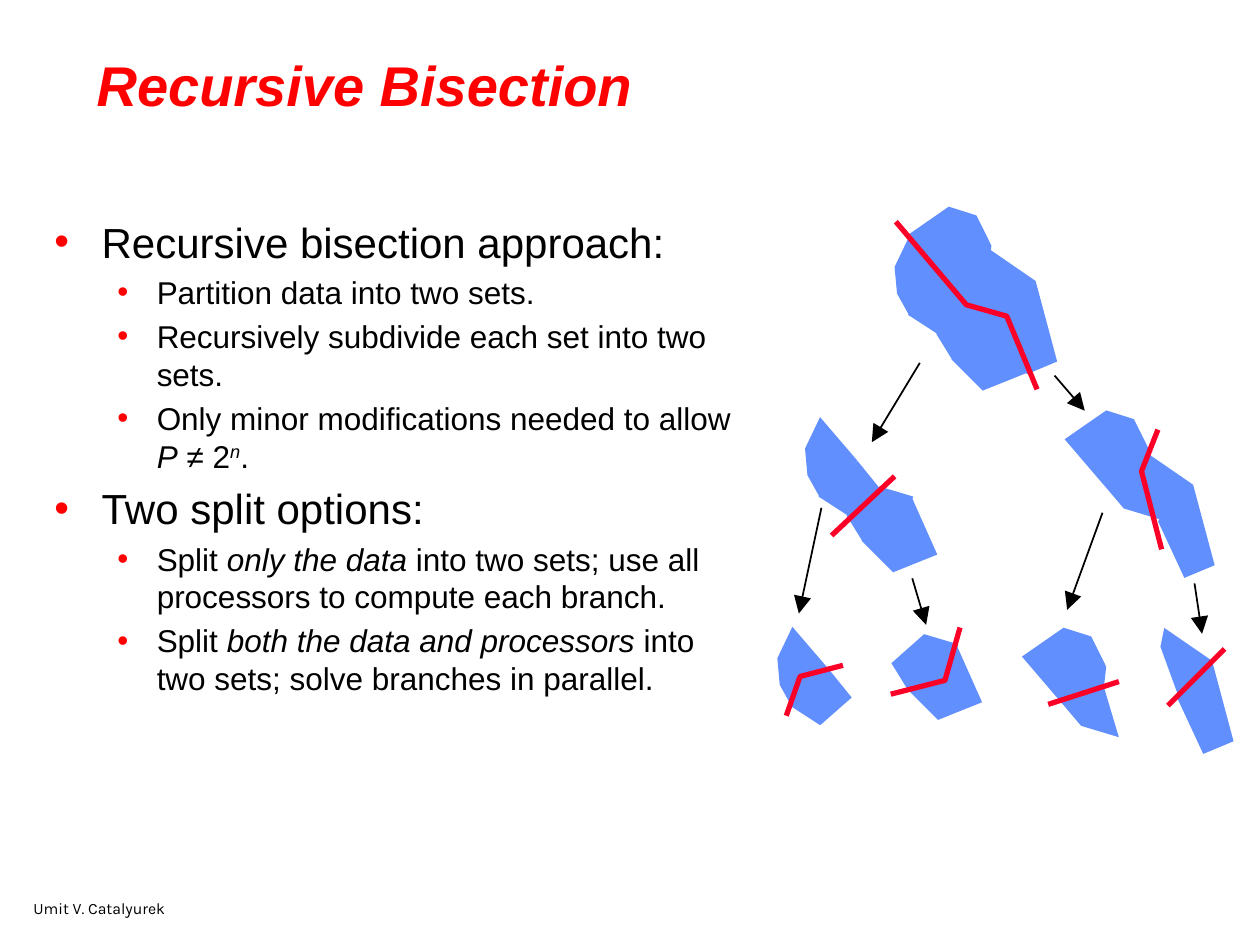
"""Build the recursive bisection slide."""
from dataclasses import dataclass

from lxml import etree
from pptx import Presentation
from pptx.dml.color import RGBColor
from pptx.enum.shapes import MSO_CONNECTOR
from pptx.enum.text import MSO_ANCHOR, PP_ALIGN
from pptx.oxml.ns import qn
from pptx.util import Pt

STRAIGHT = MSO_CONNECTOR.STRAIGHT
MIDDLE, TOP = MSO_ANCHOR.MIDDLE, MSO_ANCHOR.TOP
LEFT = PP_ALIGN.LEFT
BLUE, CRIMSON, RED, BLACK = "618FFD", "FC0128", "FF0000", "000000"
Point = tuple[float, float]

CELLS: dict[str, list[Point]] = {
    "A": [(519, 180), (535.7, 190.8), (553.7, 175), (541.4, 159.8), (523.4, 164.9)],
    "B": [(519.8, 134.6), (511.2, 152.6), (512.6, 167.8), (519.8, 180.7),
          (524.2, 165.6), (541.4, 159.8)],
    "C": [(553.7, 174.2), (573.1, 180), (565.9, 200.2), (544.3, 205.9), (535, 190.8)],
    "D": [(540, 159.8), (565.2, 151.9), (573.8, 180.7), (552.2, 174.2)],
    "E": [(572.4, 180.7), (586.8, 213.1), (561.6, 223.2), (543.6, 205.2), (565.2, 200.2)],
    "F": [(518.4, 134.6), (542.2, 118.1), (558, 123.1), (566.6, 140.4),
          (565.2, 152.6), (540, 159.8)],
    "G": [(564.5, 141.8), (591.8, 160.6), (573.1, 182.2), (562.3, 152.6)],
    "H": [(591.8, 160.6), (604.1, 206.6), (586.8, 213.8), (571.7, 181.4)],
}


@dataclass
class Part:
    """A set of cells, its shift from the root and its cut."""
    cells: str
    shift: Point
    cut: list[Point]


@dataclass
class Item:
    """A bullet with its level and its (text, style) runs."""
    level: int
    runs: list[tuple[str, str]]


@dataclass
class Level:
    """Text size and indents of a bullet level."""
    size: float
    margin: float
    indent: float


PARTS = [
    Part("ABCDEFGH", (0, 0),
         [(511.9, 126.7), (552.2, 174.2), (575.3, 180.7), (592.6, 222.5)]),
    Part("ABCE", (-51.2, 103.8), [(475.2, 306), (511.2, 272.2)]),
    Part("DFGH", (90, 116.4), [(661.7, 245.5), (652.3, 269.3), (663.8, 313.9)]),
    Part("AB", (-67, 223.6), [(449.3, 409), (457.2, 386.6), (481.7, 380.2)]),
    Part("CE", (-25.6, 188.2), [(509, 396.7), (540, 388.8), (548.6, 358.6)]),
    Part("DF", (65.6, 240.6), [(599, 402.5), (639.4, 389.5)]),
    Part("GH", (100.8, 217), [(667.4, 403.2), (699.8, 370.8)]),
]
ARROWS: list[tuple[Point, Point]] = [
    ((525.6, 207.4), (498.2, 252.7)), ((602.6, 214.6), (619.9, 234.7)),
    ((469.4, 290.2), (456.5, 350.6)), ((521.3, 330.5), (529.2, 357.1)),
    ((630, 293), (609.8, 348.5)), ((682.6, 333.4), (686.9, 362.2)),
]
LEVELS = [Level(24, 27, -27), Level(18, 58.5, -22.5)]
ITEMS = [
    Item(0, [("Recursive bisection approach:", "")]),
    Item(1, [("Partition data into two sets.", "")]),
    Item(1, [("Recursively subdivide each set into two sets.", "")]),
    Item(1, [("Only minor modifications needed to allow ", ""), ("P", "i"),
             (" ≠ 2", ""), ("n", "sup"), (".", "")]),
    Item(0, [("Two split options:", "")]),
    Item(1, [("Split ", ""), ("only the data", "i"),
             (" into two sets; use all processors to compute each branch.", "")]),
    Item(1, [("Split ", ""), ("both the data and processors", "i"),
             (" into two sets; solve branches in parallel.", "")]),
]


def paint(target, color: str) -> None:
    """Give a fill or font colour from a hex string."""
    target.rgb = RGBColor.from_string(color)


def style(target, values: dict) -> None:
    """Set attributes from a dict of format values."""
    for name, value in values.items():
        setattr(target, name, value)


def place(shape, left: float, top: float, width: float, height: float) -> None:
    """Move and size a shape in points."""
    style(shape, {"left": Pt(left), "top": Pt(top),
                  "width": Pt(width), "height": Pt(height)})


def write(para, text: str, color: str, **values):
    """Add a styled run to a paragraph."""
    run = para.add_run()
    run.text = text
    style(run.font, values)
    paint(run.font.color, color)
    return run


def trace(slide, points: list[Point], closed: bool):
    """Draw a freeform through the points."""
    path = [(Pt(x), Pt(y)) for x, y in points]
    pen = slide.shapes.build_freeform(*path[0], scale=1.0)
    pen.add_line_segments(path[1:], close=closed)
    shape = pen.convert_to_shape()
    shape.shadow.inherit = False
    return shape


def draw_cell(slide, points: list[Point]) -> None:
    """Draw one filled cell."""
    shape = trace(slide, points, True)
    shape.fill.solid()
    paint(shape.fill.fore_color, BLUE)
    shape.line.fill.background()


def join(slide, start: Point, end: Point):
    """Draw a straight connector without shadow."""
    link = slide.shapes.add_connector(STRAIGHT, *(Pt(v) for v in (*start, *end)))
    etree.SubElement(link._element.spPr, qn("a:effectLst"))
    return link


def ink(shape, color: str, width: float) -> None:
    """Set line colour and width."""
    paint(shape.line.color, color)
    shape.line.width = Pt(width)


def draw_part(slide, part: Part) -> None:
    """Draw the cells of a part and the cut across them."""
    dx, dy = part.shift
    for key in part.cells:
        draw_cell(slide, [(x + dx, y + dy) for x, y in CELLS[key]])
    if len(part.cut) == 2:
        cut = join(slide, *part.cut)
    else:
        cut = trace(slide, part.cut, False)
        cut.fill.background()
    ink(cut, CRIMSON, 3)


def draw_arrow(slide, start: Point, end: Point) -> None:
    """Draw a thin arrow."""
    link = join(slide, start, end)
    ink(link, BLACK, 1)
    etree.SubElement(link.line._get_or_add_ln(), qn("a:tailEnd"),
                     type="triangle", w="lg", len="lg")


def add_item(para, item: Item) -> None:
    """Fill a paragraph with a bullet item."""
    level = LEVELS[item.level]
    style(para, {"level": item.level, "alignment": LEFT,
                 "space_before": Pt(level.size * 0.2)})
    props = para._p.get_or_add_pPr()
    props.set("marL", str(Pt(level.margin)))
    props.set("indent", str(Pt(level.indent)))
    tint = etree.SubElement(props, qn("a:buClr"))
    etree.SubElement(tint, qn("a:srgbClr"), val=RED)
    etree.SubElement(props, qn("a:buFont"), typeface="Arial")
    etree.SubElement(props, qn("a:buChar"), char="•")
    for text, look in item.runs:
        run = write(para, text, BLACK, name="Arial", size=Pt(level.size),
                    italic=bool(look))
        if look == "sup":
            run._r.get_or_add_rPr().set("baseline", "30000")


def add_box(slide, *area: float):
    """Add a wrapping text box and return its frame."""
    box = slide.shapes.add_textbox(*(Pt(v) for v in area))
    style(box.text_frame, {"word_wrap": True, "vertical_anchor": TOP})
    return box.text_frame


def main() -> None:
    """Build and save the slide."""
    deck = Presentation()
    style(deck, {"slide_width": Pt(720), "slide_height": Pt(540)})
    slide = deck.slides.add_slide(deck.slide_layouts[5])
    title = slide.shapes.title
    place(title, 48, 24, 590, 48)
    title.text_frame.vertical_anchor = MIDDLE
    head = title.text_frame.paragraphs[0]
    head.alignment = LEFT
    write(head, "Recursive Bisection", RED, name="Arial", size=Pt(32),
          bold=True, italic=True)
    foot = add_box(slide, 12, 510, 180, 18)
    write(foot.paragraphs[0], "Umit V. Catalyurek", BLACK, name="Karla", size=Pt(9))
    body = add_box(slide, 24, 120, 402, 378)
    for index, item in enumerate(ITEMS):
        add_item(body.add_paragraph() if index else body.paragraphs[0], item)
    for part in PARTS:
        draw_part(slide, part)
    for start, end in ARROWS:
        draw_arrow(slide, start, end)
    deck.save("out.pptx")


if __name__ == "__main__":
    main()
